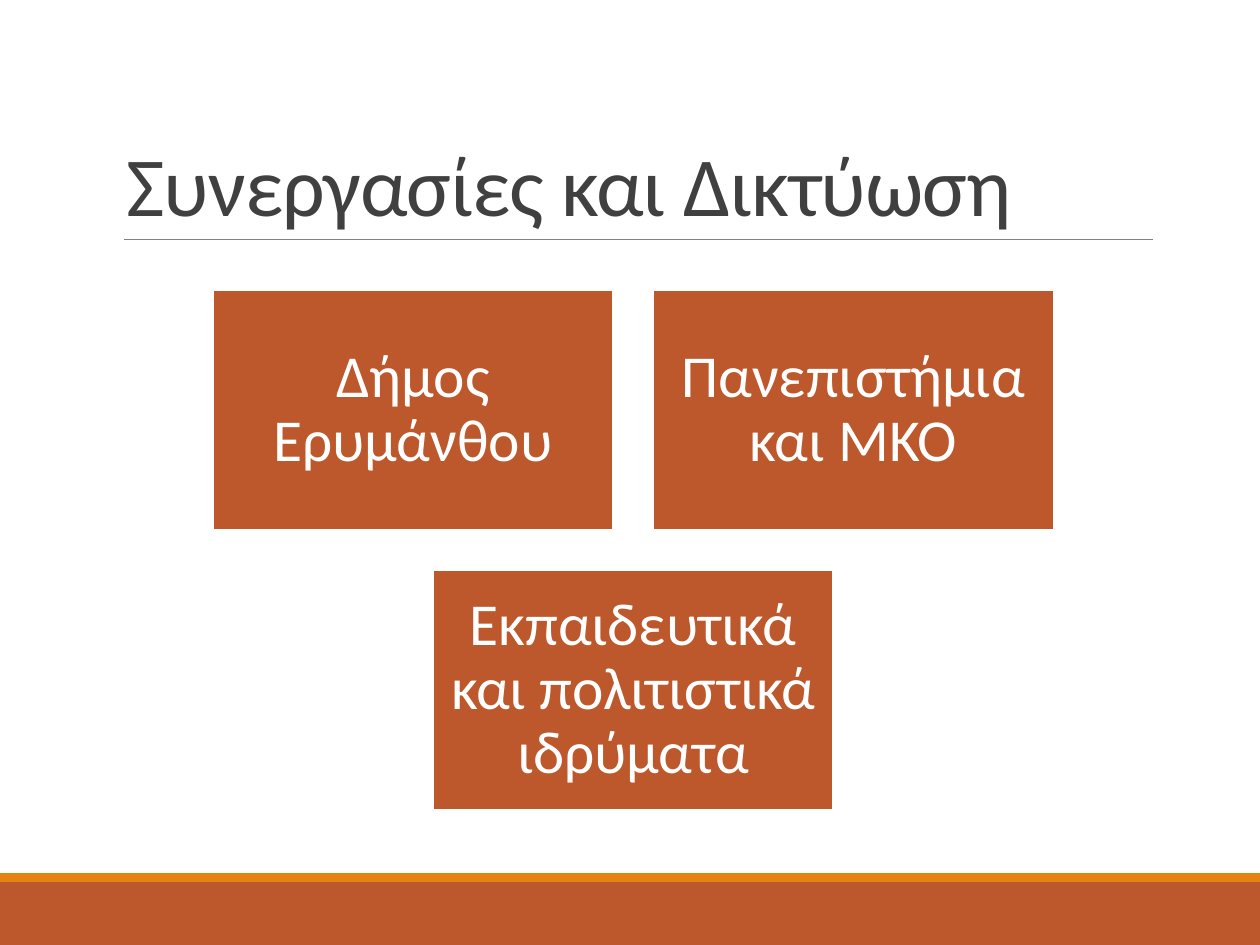
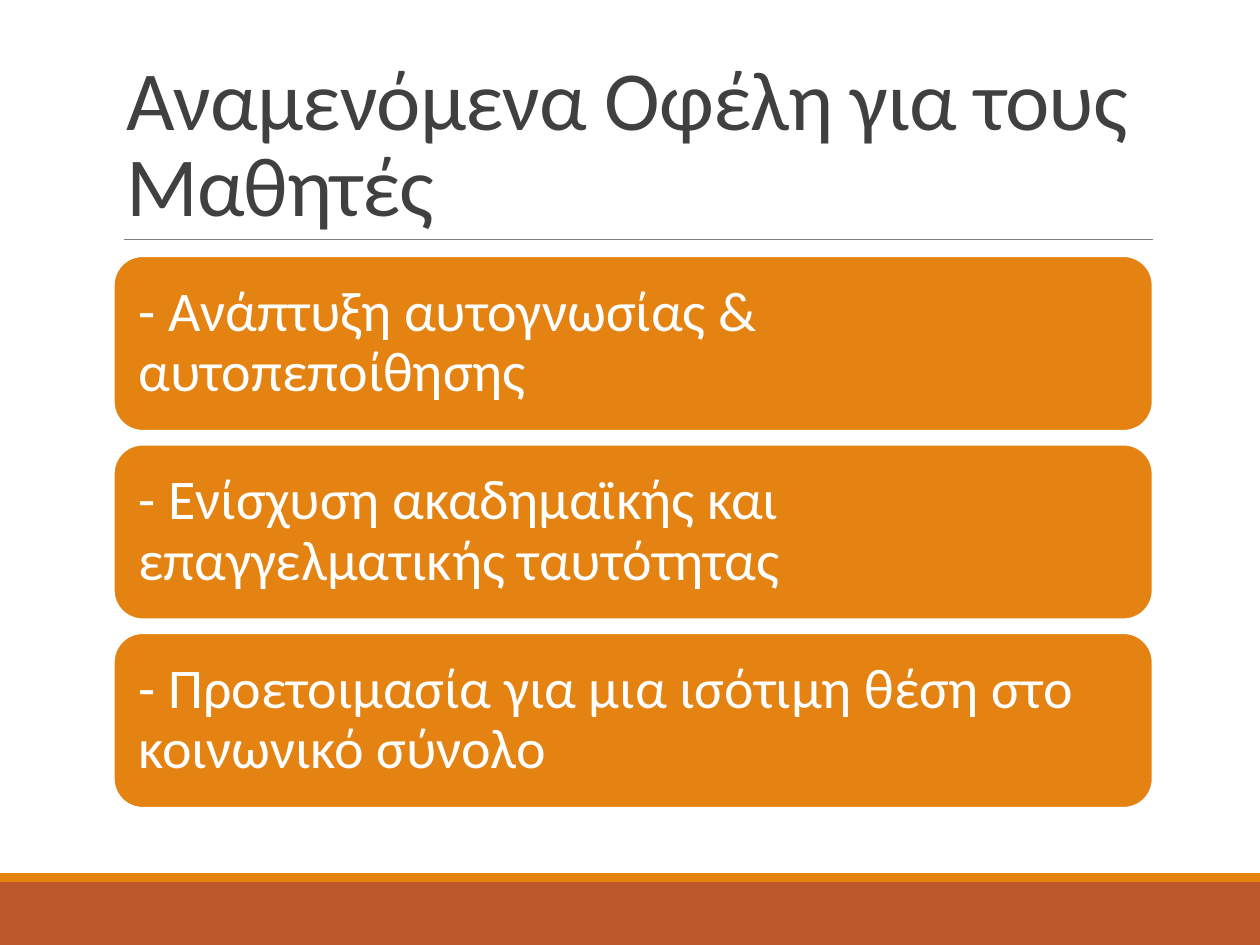
"""Build two slides on partnerships and expected benefits for pupils."""
from dataclasses import dataclass
from typing import NamedTuple

from pptx import Presentation
from pptx import util as u
from pptx.dml.color import RGBColor
from pptx.enum import shapes, text
from pptx.oxml.ns import qn
from lxml import etree


@dataclass(frozen=True)
class Theme:
    """Colours, font and type sizes of the deck."""
    rust: RGBColor = RGBColor(0xBD, 0x58, 0x2C)
    orange: RGBColor = RGBColor(0xE4, 0x83, 0x12)
    white: RGBColor = RGBColor(0xFF, 0xFF, 0xFF)
    ink: RGBColor = RGBColor(0x40, 0x40, 0x40)
    rule: RGBColor = RGBColor(0x80, 0x80, 0x80)
    font: str = "Calibri"
    title_size: float = 48
    tile_size: float = 34
    card_size: float = 32


class Area(NamedTuple):
    """A rectangle in centimetres."""
    left: float
    top: float
    width: float
    height: float

    def lengths(self) -> tuple:
        return tuple(u.Cm(value) for value in self)


class BoxStyle(NamedTuple):
    """The look of a filled box with text."""
    outline: shapes.MSO_SHAPE
    fill: RGBColor
    size: float
    align: text.PP_ALIGN
    inset: float


THEME = Theme()
TITLE = Area(2.29, 0.79, 20.95, 4.04)
RULE_LEFT, RULE_RIGHT, RULE_TOP = 2.49, 23.24, 4.83
BANDS = ((Area(0, 17.78, 25.4, 1.27), THEME.rust),
         (Area(0, 17.6, 25.4, 0.18), THEME.orange))

TILE = BoxStyle(shapes.MSO_SHAPE.RECTANGLE, THEME.rust, THEME.tile_size,
                text.PP_ALIGN.CENTER, 0.36)
CARD = BoxStyle(shapes.MSO_SHAPE.ROUNDED_RECTANGLE, THEME.orange, THEME.card_size,
                text.PP_ALIGN.LEFT, 0.33)

TILE_TOP, TILE_WIDTH, TILE_HEIGHT, TILE_GAP = 5.84, 8.08, 4.85, 0.8
CARD_TOP, CARD_HEIGHT, CARD_GAP = 5.16, 3.53, 0.27

PARTNER_ROWS = (("Δήμος Ερυμάνθου", "Πανεπιστήμια και ΜΚΟ"),
                ("Εκπαιδευτικά και πολιτιστικά ιδρύματα",))
BENEFITS = ("- Ανάπτυξη αυτογνωσίας & αυτοπεποίθησης",
            "- Ενίσχυση ακαδημαϊκής και επαγγελματικής ταυτότητας",
            "- Προετοιμασία για μια ισότιμη θέση στο κοινωνικό σύνολο")


def write(frame, words: str, size: float, color: RGBColor,
          align: text.PP_ALIGN, spacing: float):
    """Fill a text frame with one formatted paragraph and return its run."""
    frame.text = words
    frame.word_wrap = True
    frame.auto_size = text.MSO_AUTO_SIZE.NONE
    para = frame.paragraphs[0]
    para.alignment = align
    para.line_spacing = spacing
    span = para.runs[0]
    span.font.name = THEME.font
    span.font.size = u.Pt(size)
    span.font.color.rgb = color
    return span


def add_filled(page, outline: shapes.MSO_SHAPE, area: Area, fill: RGBColor):
    """Add a flat filled shape without an outline."""
    box = page.shapes.add_shape(outline, *area.lengths())
    box.shadow.inherit = False
    box.fill.solid()
    box.fill.fore_color.rgb = fill
    box.line.fill.background()
    return box


def add_box(page, area: Area, words: str, style: BoxStyle) -> None:
    """Add a white-edged box with vertically centred text."""
    box = add_filled(page, style.outline, area, style.fill)
    box.line.color.rgb = THEME.white
    box.line.width = u.Pt(1.25)
    frame = box.text_frame
    write(frame, words, style.size, THEME.white, style.align, 0.9)
    frame.vertical_anchor = text.MSO_ANCHOR.MIDDLE
    frame.margin_left = frame.margin_right = u.Cm(style.inset)
    frame.margin_top = frame.margin_bottom = u.Cm(style.inset)


def add_page(deck, heading: str):
    """Add a slide with the shared bands, rule and title."""
    page = deck.slides.add_slide(deck.slide_layouts[5])
    for area, fill in BANDS:
        add_filled(page, shapes.MSO_SHAPE.RECTANGLE, area, fill)
    rule = page.shapes.add_connector(
        shapes.MSO_CONNECTOR.STRAIGHT, u.Cm(RULE_LEFT), u.Cm(RULE_TOP),
        u.Cm(RULE_RIGHT), u.Cm(RULE_TOP))
    rule.line.color.rgb = THEME.rule
    rule.line.width = u.Pt(0.5)
    etree.SubElement(rule._element.spPr, qn("a:effectLst"))

    title = page.shapes.title
    title.left, title.top, title.width, title.height = TITLE.lengths()
    span = write(title.text_frame, heading, THEME.title_size, THEME.ink,
                 text.PP_ALIGN.LEFT, 0.85)
    span.font._element.set("spc", "-50")
    title.text_frame.vertical_anchor = text.MSO_ANCHOR.BOTTOM
    return page


def add_partners(page) -> None:
    """Lay out the partner tiles in rows centred under the title."""
    centre = TITLE.left + TITLE.width / 2
    for row, names in enumerate(PARTNER_ROWS):
        row_width = len(names) * (TILE_WIDTH + TILE_GAP) - TILE_GAP
        top = TILE_TOP + row * (TILE_HEIGHT + TILE_GAP)
        for column, name in enumerate(names):
            left = centre - row_width / 2 + column * (TILE_WIDTH + TILE_GAP)
            add_box(page, Area(left, top, TILE_WIDTH, TILE_HEIGHT), name, TILE)


def add_benefits(page) -> None:
    """Stack the benefit cards across the width of the title."""
    for row, benefit in enumerate(BENEFITS):
        top = CARD_TOP + row * (CARD_HEIGHT + CARD_GAP)
        add_box(page, Area(TITLE.left, top, TITLE.width, CARD_HEIGHT), benefit, CARD)


def main() -> None:
    """Build and save the deck."""
    deck = Presentation()
    deck.slide_width, deck.slide_height = u.Cm(25.4), u.Cm(19.05)
    add_partners(add_page(deck, "Συνεργασίες και Δικτύωση"))
    add_benefits(add_page(deck, "Αναμενόμενα Οφέλη για τους Μαθητές"))
    deck.save("out.pptx")


if __name__ == "__main__":
    main()
